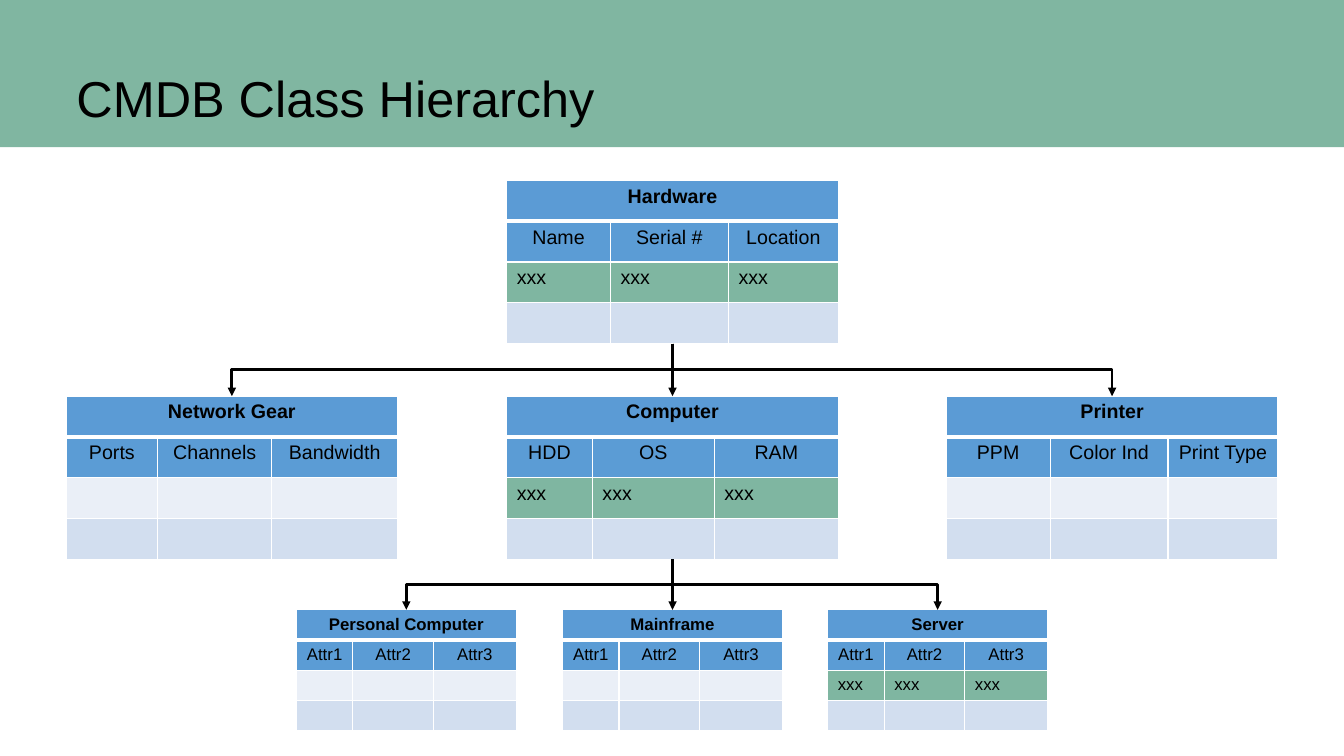
from lxml import etree
from pptx import Presentation
from pptx.dml.color import RGBColor
from pptx.enum.shapes import MSO_CONNECTOR, MSO_SHAPE
from pptx.enum.text import MSO_ANCHOR, PP_ALIGN
from pptx.oxml.ns import qn
from pptx.util import Inches, Pt

ELBOW = MSO_CONNECTOR.ELBOW
RECT = MSO_SHAPE.RECTANGLE
BOTTOM = MSO_ANCHOR.BOTTOM
LEFT, CENTER = PP_ALIGN.LEFT, PP_ALIGN.CENTER

FONT = "Arial"
COLORS = {
    "band": "80B6A1",
    "head": "5B9BD5",
    "field": "5B9CD5",
    "value": "7FB6A1",
    "light": "EAEFF7",
    "dark": "D2DEEF",
    "text": "000000",
    "rule": "FFFFFF",
}

MID = 6.67
WIDE = {"row": 0.405, "size": 14}
SMALL = {"row": 0.3, "size": 12}
ATTRS = ["Attr1", "Attr2", "Attr3"]
ATTR_COLS = [0.56, 0.8, 0.82]

# Each level: top, table style, and (centre, name, fields, columns, has values)
LEVELS = [
    (1.79, WIDE, [
        (MID, "Hardware", ["Name", "Serial #", "Location"], [1.03, 1.17, 1.09], True),
    ]),
    (3.93, WIDE, [
        (2.3, "Network Gear", ["Ports", "Channels", "Bandwidth"], [0.91, 1.13, 1.25], False),
        (MID, "Computer", ["HDD", "OS", "RAM"], [0.85, 1.21, 1.23], True),
        (11.03, "Printer", ["PPM", "Color Ind", "Print Type"], [1.03, 1.17, 1.09], False),
    ]),
    (6.05, SMALL, [
        (4.03, "Personal Computer", ATTRS, ATTR_COLS, False),
        (MID, "Mainframe", ATTRS, ATTR_COLS, False),
        (9.3, "Server", ATTRS, ATTR_COLS, True),
    ]),
]


def color(name):
    return RGBColor.from_string(COLORS[name])


def style(para, size, bold=False, align=LEFT):
    para.alignment = align
    for run in para.runs:
        run.font.name = FONT
        run.font.size = Pt(size)
        run.font.bold = bold
        run.font.color.rgb = color("text")


def add_title(slide, text):
    band = slide.shapes.add_shape(RECT, 0, 0, Inches(13.33), Inches(1.46))
    band.shadow.inherit = False
    band.fill.solid()
    band.fill.fore_color.rgb = color("band")
    band.line.fill.background()
    box = slide.shapes.add_textbox(Inches(0.66), 0, Inches(11.76), Inches(1.32))
    frame = box.text_frame
    frame.word_wrap = True
    frame.vertical_anchor = BOTTOM
    frame.text = text
    para = frame.paragraphs[0]
    para.line_spacing = 0.9
    style(para, 36)


def add_borders(cell, top, bottom):
    """Rule all four sides of a cell; top and bottom are widths in points."""
    props = cell._tc.get_or_add_tcPr()
    for side, width in zip("LRTB", (1, 1, top, bottom)):
        line = etree.SubElement(props, qn(f"a:ln{side}"), w=str(Pt(width)))
        fill = etree.SubElement(line, qn("a:solidFill"))
        etree.SubElement(fill, qn("a:srgbClr"), val=COLORS["rule"])


def fill_cell(cell, text, fill, size, row):
    add_borders(cell, 3 if row == 1 else 1, 3 if row == 0 else 1)
    cell.fill.solid()
    cell.fill.fore_color.rgb = color(fill)
    para = cell.text_frame.paragraphs[0]
    if text:
        para.text = text
        style(para, size, row == 0, CENTER if row < 2 else LEFT)
    else:
        # An empty cell needs its own size to keep the row height
        etree.SubElement(para._p, qn("a:endParaRPr"), sz=str(size * 100))


def add_class(slide, top, look, mid, name, fields, cols, filled):
    """Add one class table: name, field names and two records."""
    width = sum(cols)
    frame = slide.shapes.add_table(
        4, 3, Inches(mid - width / 2), Inches(top),
        Inches(width), Inches(4 * look["row"]))
    table = frame.table
    table.first_row = table.horz_banding = False
    for col, size in zip(table.columns, cols):
        col.width = Inches(size)
    rows = [
        ([name, "", ""], "head"),
        (fields, "field"),
        (["xxx"] * 3, "value") if filled else ([""] * 3, "light"),
        ([""] * 3, "dark"),
    ]
    for i, (texts, fill) in enumerate(rows):
        table.rows[i].height = Inches(look["row"])
        for j, text in enumerate(texts):
            fill_cell(table.cell(i, j), text, fill, look["size"], i)
    table.cell(0, 0).merge(table.cell(0, 2))


def add_link(slide, start, end, mid):
    """Add an arrow that runs down, across and down from MID to mid."""
    x, y = (MID + mid) / 2, (start + end) / 2
    drop, span = end - start, abs(mid - MID)
    # The elbow is laid out sideways, then turned a quarter
    right = mid > MID
    ends = [x - drop / 2, x + drop / 2]
    if right:
        ends.reverse()
    link = slide.shapes.add_connector(
        ELBOW, Inches(ends[0]), Inches(y - span / 2),
        Inches(ends[1]), Inches(y + span / 2))
    props = link._element.spPr
    props.find(qn("a:xfrm")).set("rot", str((270 if right else 90) * 60000))
    link.line.width = Pt(2)
    link.line.color.rgb = color("text")
    etree.SubElement(props.find(qn("a:ln")), qn("a:tailEnd"), type="triangle")
    etree.SubElement(props, qn("a:effectLst"))


def main():
    deck = Presentation()
    deck.slide_width, deck.slide_height = Inches(13.33), Inches(7.5)
    slide = deck.slides.add_slide(deck.slide_layouts[6])
    add_title(slide, "CMDB Class Hierarchy")
    base = None
    for top, look, classes in LEVELS:
        for item in classes:
            add_class(slide, top, look, *item)
            if base:
                add_link(slide, base, top, item[0])
        base = top + 4 * look["row"]
    deck.save("out.pptx")


if __name__ == "__main__":
    main()
